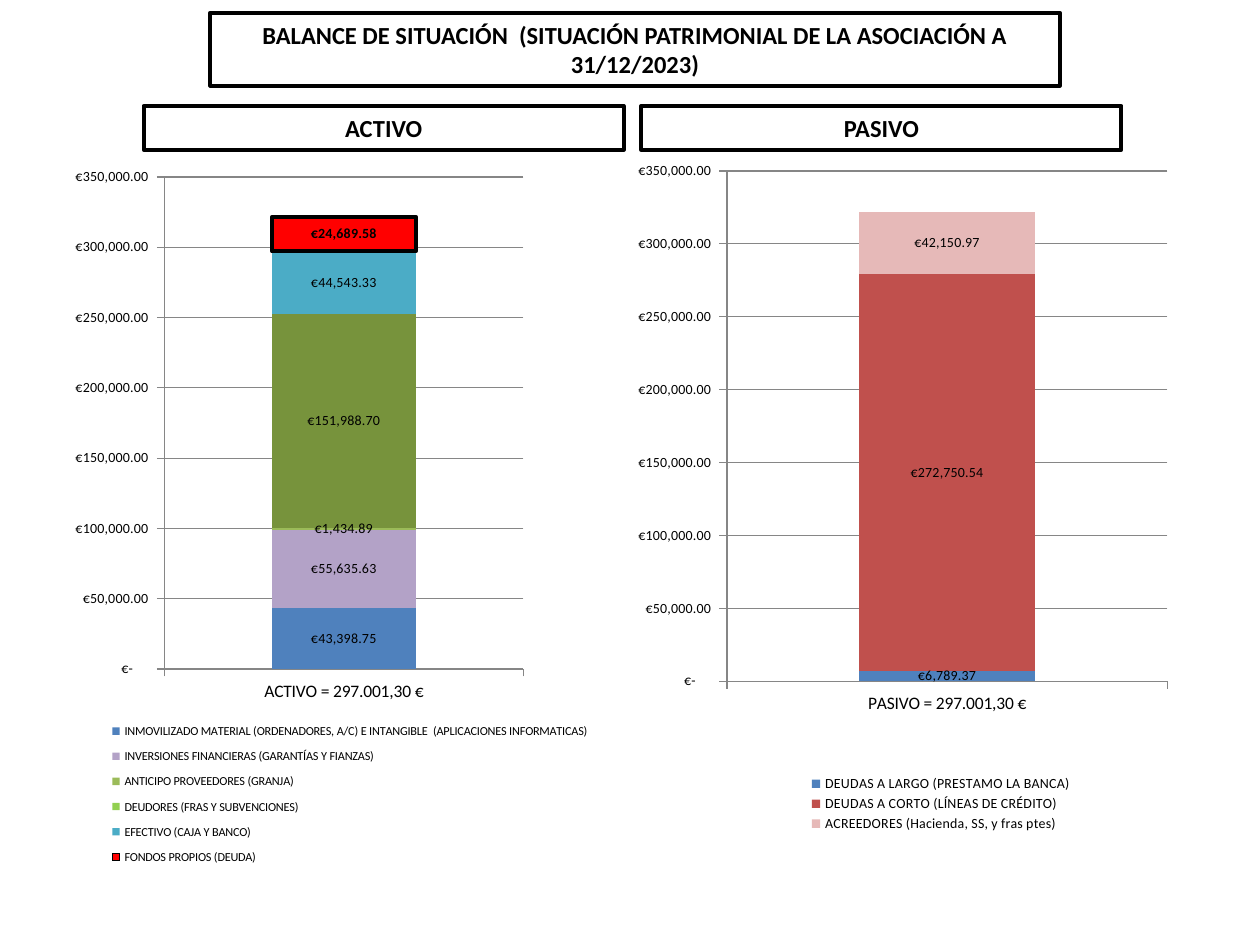
from lxml import etree
from pptx import Presentation
from pptx.chart.data import CategoryChartData
from pptx.dml.color import RGBColor
from pptx.enum import chart as ch, shapes, text
from pptx.oxml import ns
from pptx.util import Inches, Pt

BLACK = RGBColor(0, 0, 0)
WHITE = RGBColor(0xFF, 0xFF, 0xFF)
GRAY = RGBColor(0x86, 0x86, 0x86)
BLUE = RGBColor(0x4F, 0x81, 0xBD)
PURPLE = RGBColor(0xB3, 0xA2, 0xC7)
GREEN = RGBColor(0x9B, 0xBB, 0x59)
LIME = RGBColor(0x92, 0xD0, 0x50)
OLIVE = RGBColor(0x77, 0x93, 0x3C)
TEAL = RGBColor(0x4B, 0xAC, 0xC6)
RED = RGBColor(0xFF, 0, 0)
BRICK = RGBColor(0xC0, 0x50, 0x4D)
PINK = RGBColor(0xE6, 0xB9, 0xB8)

FONT = "Calibri"
EURO = '_("€"* #,##0.00_);_("€"* \\(#,##0.00\\);_("€"* "-"??_);_(@_)'

ASSETS = [
    ("INMOVILIZADO MATERIAL (ORDENADORES, A/C) E INTANGIBLE  (APLICACIONES INFORMATICAS)", 43398.75, BLUE),
    ("INVERSIONES FINANCIERAS (GARANTÍAS Y FIANZAS)", 55635.63, PURPLE),
    ("ANTICIPO PROVEEDORES (GRANJA)", 1434.89, GREEN),
    ("DEUDORES (FRAS Y SUBVENCIONES)", 151988.70, LIME),
    ("EFECTIVO (CAJA Y BANCO)", 44543.33, TEAL),
    ("FONDOS PROPIOS (DEUDA)", 24689.58, RED),
]
LIABILITIES = [
    ("DEUDAS A LARGO (PRESTAMO LA BANCA)", 6789.37, BLUE),
    ("DEUDAS A CORTO (LÍNEAS DE CRÉDITO)", 272750.54, BRICK),
    ("ACREEDORES (Hacienda, SS, y fras ptes)", 42150.97, PINK),
]


def format_font(font, size, bold=False, color=BLACK):
    font.name = FONT
    font.size = Pt(size)
    font.bold = bold
    font.color.rgb = color


def write_text(sp, content, size=14, bold=True, align=text.PP_ALIGN.CENTER):
    tf = sp.text_frame
    tf.word_wrap = True
    tf.auto_size = text.MSO_AUTO_SIZE.NONE
    tf.vertical_anchor = text.MSO_ANCHOR.MIDDLE
    p = tf.paragraphs[0]
    p.alignment = align
    r = p.add_run()
    r.text = content
    format_font(r.font, size, bold)


def outline(fmt, color=BLACK, width=2.25):
    fmt.line.color.rgb = color
    fmt.line.width = Pt(width)


def frame(sp, content):
    sp.fill.solid()
    sp.fill.fore_color.rgb = WHITE
    outline(sp)
    write_text(sp, content)


def add_title(s, content, left, top, width, height):
    sp = s.shapes.title
    sp.left, sp.top = Inches(left), Inches(top)
    sp.width, sp.height = Inches(width), Inches(height)
    frame(sp, content)


def add_heading(s, content, left):
    sp = s.shapes.add_shape(shapes.MSO_SHAPE.RECTANGLE, Inches(left),
                            Inches(0.84), Inches(3.81), Inches(0.35))
    sp.shadow.inherit = False
    frame(sp, content)


def set_layout(parent, index, box, inner=False):
    for old in parent.findall(ns.qn("c:layout")):
        parent.remove(old)
    layout = etree.Element(ns.qn("c:layout"))
    manual = etree.SubElement(layout, ns.qn("c:manualLayout"))
    values = [("layoutTarget", "inner")] if inner else []
    values += [("xMode", "edge"), ("yMode", "edge"), *zip("xywh", box)]
    for tag, value in values:
        etree.SubElement(manual, ns.qn(f"c:{tag}")).set("val", str(value))
    parent.insert(index, layout)


def format_axes(chart):
    axis = chart.value_axis
    axis.minimum_scale, axis.maximum_scale, axis.major_unit = 0, 350000, 50000
    axis.tick_labels.number_format = EURO
    axis.tick_labels.number_format_is_linked = False
    axis.has_major_gridlines = True
    outline(axis.major_gridlines.format, GRAY, 0.75)
    for item, size in ((axis, 8), (chart.category_axis, 10)):
        item.major_tick_mark = ch.XL_TICK_MARK.OUTSIDE
        format_font(item.tick_labels.font, size)
        outline(item.format, GRAY, 0.75)


def format_series(series, color):
    series.format.fill.solid()
    series.format.fill.fore_color.rgb = color
    series.invert_if_negative = False
    labels = series.data_labels
    labels.show_value = True
    labels.position = ch.XL_LABEL_POSITION.CENTER
    labels.number_format = EURO
    labels.number_format_is_linked = False
    format_font(labels.font, 8)


def add_balance_chart(s, category, items, box, plot_box, legend_box, legend_size):
    data = CategoryChartData(number_format=EURO)
    data.categories = [category]
    for name, value, _ in items:
        data.add_series(name, [value])
    chart = s.shapes.add_chart(ch.XL_CHART_TYPE.COLUMN_STACKED,
                               *map(Inches, box), data).chart
    chart.has_title = False
    format_font(chart.font, 10)
    format_axes(chart)
    plot = chart.plots[0]
    plot.gap_width, plot.overlap, plot.vary_by_categories = 150, 100, False
    for series, (_, _, color) in zip(plot.series, items):
        format_series(series, color)
    chart.has_legend = True
    legend = chart.legend
    legend.position = ch.XL_LEGEND_POSITION.BOTTOM
    legend.include_in_layout = False
    format_font(legend.font, legend_size)
    plot_area = chart.element.find(f".//{ns.qn('c:plotArea')}")
    set_layout(plot_area, 0, plot_box, inner=True)
    set_layout(chart.element.find(f".//{ns.qn('c:legend')}"), 1, legend_box)
    return plot.series


def main():
    prs = Presentation()
    prs.slide_width, prs.slide_height = Inches(10), Inches(7.5)
    s = prs.slides.add_slide(prs.slide_layouts[5])
    add_title(s, "BALANCE DE SITUACIÓN  (SITUACIÓN PATRIMONIAL DE LA ASOCIACIÓN A 31/12/2023)",
              1.67, 0.1, 6.74, 0.58)
    add_heading(s, "ACTIVO", 1.14)
    add_heading(s, "PASIVO", 5.09)
    assets = add_balance_chart(
        s, "ACTIVO = 297.001,30 €", ASSETS, (0.43, 1.23, 4.6, 5.83),
        (0.19, 0.03, 0.62, 0.67), (0.08, 0.76, 0.86, 0.22), 7)
    add_balance_chart(
        s, "PASIVO = 297.001,30 €", LIABILITIES, (5.04, 1.19, 4.8, 5.55),
        (0.15, 0.03, 0.73, 0.73), (0.28, 0.89, 0.45, 0.09), 8)
    receivables, own_funds = assets[3], assets[5]
    fill = receivables.points[0].format.fill
    fill.solid()
    fill.fore_color.rgb = OLIVE
    outline(own_funds.format)
    own_funds.data_labels.font.bold = True
    prs.save("out.pptx")


if __name__ == "__main__":
    main()
